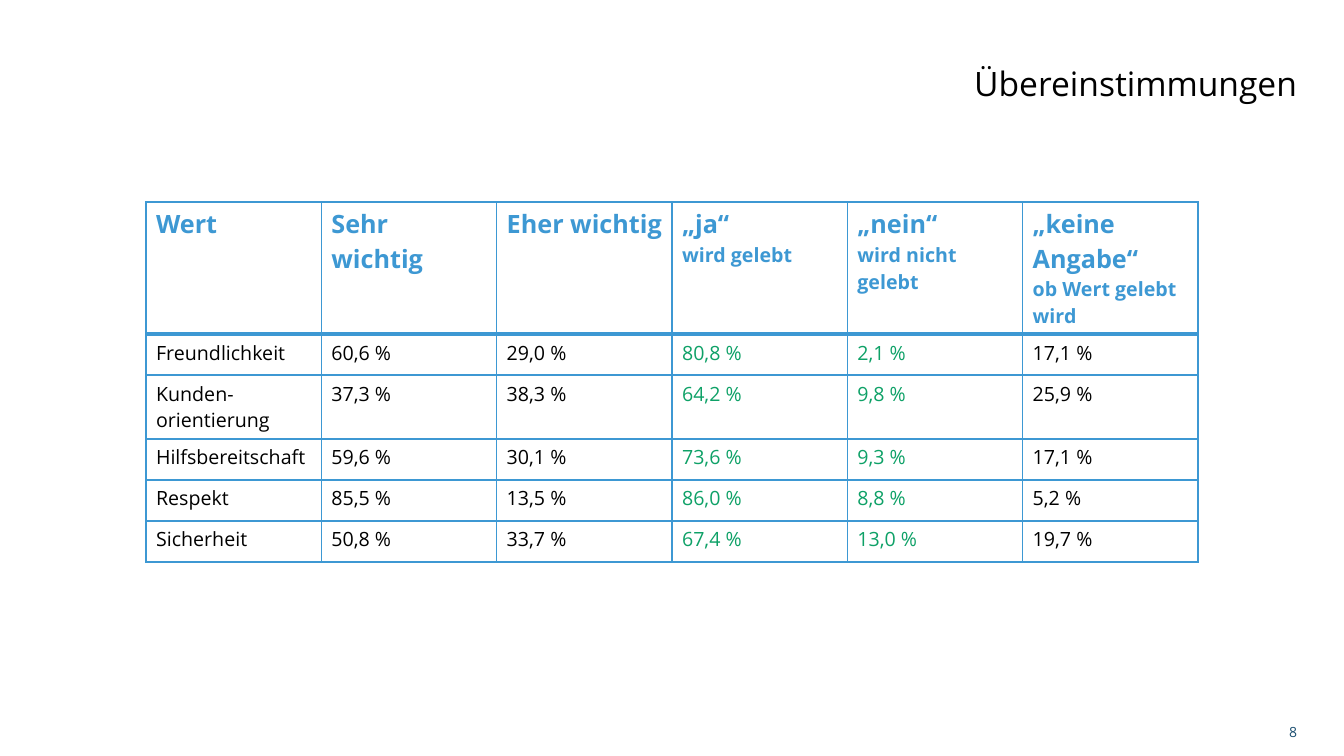
"""Build the slide comparing how important values are and how far they are lived."""
from lxml import etree
from pptx import Presentation
from pptx import util as u
from pptx.dml.color import RGBColor
from pptx.enum import text
from pptx.oxml import ns

EMU_PER_PX = 914400 / 100.8
FONT = "Open Sans"
COLORS = {
    "white": "FFFFFF",
    "black": "000000",
    "blue": "3D98D3",
    "green": "0EA167",
    "navy": "194D6F",
}
HEADERS = [
    ("Wert", ""),
    ("Sehr\nwichtig", ""),
    ("Eher wichtig", ""),
    ("„ja“ \n", "wird gelebt"),
    ("„nein“\n", "wird nicht gelebt"),
    ("„keine Angabe“\n", "ob Wert gelebt wird"),
]
RATINGS = [
    ("Freundlichkeit", "60,6", "29,0", "80,8", "2,1", "17,1"),
    ("Kunden-orientierung", "37,3", "38,3", "64,2", "9,8", "25,9"),
    ("Hilfsbereitschaft", "59,6", "30,1", "73,6", "9,3", "17,1"),
    ("Respekt", "85,5", "13,5", "86,0", "8,8", "5,2"),
    ("Sicherheit", "50,8", "33,7", "67,4", "13,0", "19,7"),
]
LIVED_COLUMNS = (3, 4)
TABLE_WIDTH = 1052
ROW_HEIGHTS = (132, 41, 64, 41, 41, 41)


def px(length):
    """Turn a length in px into EMU."""
    return u.Emu(round(length * EMU_PER_PX))


def rgb(name):
    """Return the named colour."""
    return RGBColor.from_string(COLORS[name])


def write(paragraph, content, size=14, color="black", bold=False):
    """Add formatted text to a paragraph, with a line break at each newline."""
    for index, line in enumerate(content.split("\n")):
        if index:
            paragraph.add_line_break()
        if line:
            run = paragraph.add_run()
            run.text = line
            run.font.name = FONT
            run.font.size = u.Pt(size)
            run.font.bold = bold
            run.font.color.rgb = rgb(color)


def add_right_text(slide, content, left, top, width, height, **style):
    """Add a right-aligned, vertically centred text box."""
    frame = slide.shapes.add_textbox(px(left), px(top), px(width), px(height)).text_frame
    frame.word_wrap = True
    frame.vertical_anchor = text.MSO_ANCHOR.MIDDLE
    paragraph = frame.paragraphs[0]
    paragraph.alignment = text.PP_ALIGN.RIGHT
    write(paragraph, content, **style)


def style_cell(cell, top=1, bottom=1):
    """Give a cell a white fill and blue borders with widths in points."""
    properties = cell._tc.get_or_add_tcPr()
    for side, width in (("L", 1), ("R", 1), ("T", top), ("B", bottom)):
        line = etree.SubElement(properties, ns.qn(f"a:ln{side}"), w=str(u.Pt(width)))
        fill = etree.SubElement(line, ns.qn("a:solidFill"))
        etree.SubElement(fill, ns.qn("a:srgbClr"), val=COLORS["blue"])
    cell.fill.solid()
    cell.fill.fore_color.rgb = rgb("white")


def add_ratings_table(slide, left, top):
    """Add the table of values with its header row."""
    table = slide.shapes.add_table(
        len(ROW_HEIGHTS), len(HEADERS), px(left), px(top),
        px(TABLE_WIDTH), px(sum(ROW_HEIGHTS)),
    ).table
    table.first_row = False
    table.horz_banding = False
    for column in table.columns:
        column.width = px(TABLE_WIDTH / len(HEADERS))
    for row, height in zip(table.rows, ROW_HEIGHTS):
        row.height = px(height)

    for column, (heading, detail) in enumerate(HEADERS):
        cell = table.cell(0, column)
        style_cell(cell, bottom=3)
        paragraph = cell.text_frame.paragraphs[0]
        write(paragraph, heading, size=18, color="blue", bold=True)
        write(paragraph, detail, color="blue", bold=True)

    for row, rating in enumerate(RATINGS, start=1):
        for column, entry in enumerate(rating):
            cell = table.cell(row, column)
            style_cell(cell, top=3 if row == 1 else 1)
            content = f"{entry} %" if column else entry
            color = "green" if column in LIVED_COLUMNS else "black"
            write(cell.text_frame.paragraphs[0], content, color=color)


def main():
    """Build and save the slide."""
    presentation = Presentation()
    presentation.slide_width = px(1344)
    presentation.slide_height = px(756)
    slide = presentation.slides.add_slide(presentation.slide_layouts[6])
    add_right_text(slide, "8", 1005, 708, 302, 48, size=10, color="navy")
    add_right_text(slide, "Übereinstimmungen", 291, 59, 1016, 48, size=24)
    add_ratings_table(slide, 146, 202)
    presentation.save("out.pptx")


if __name__ == "__main__":
    main()
